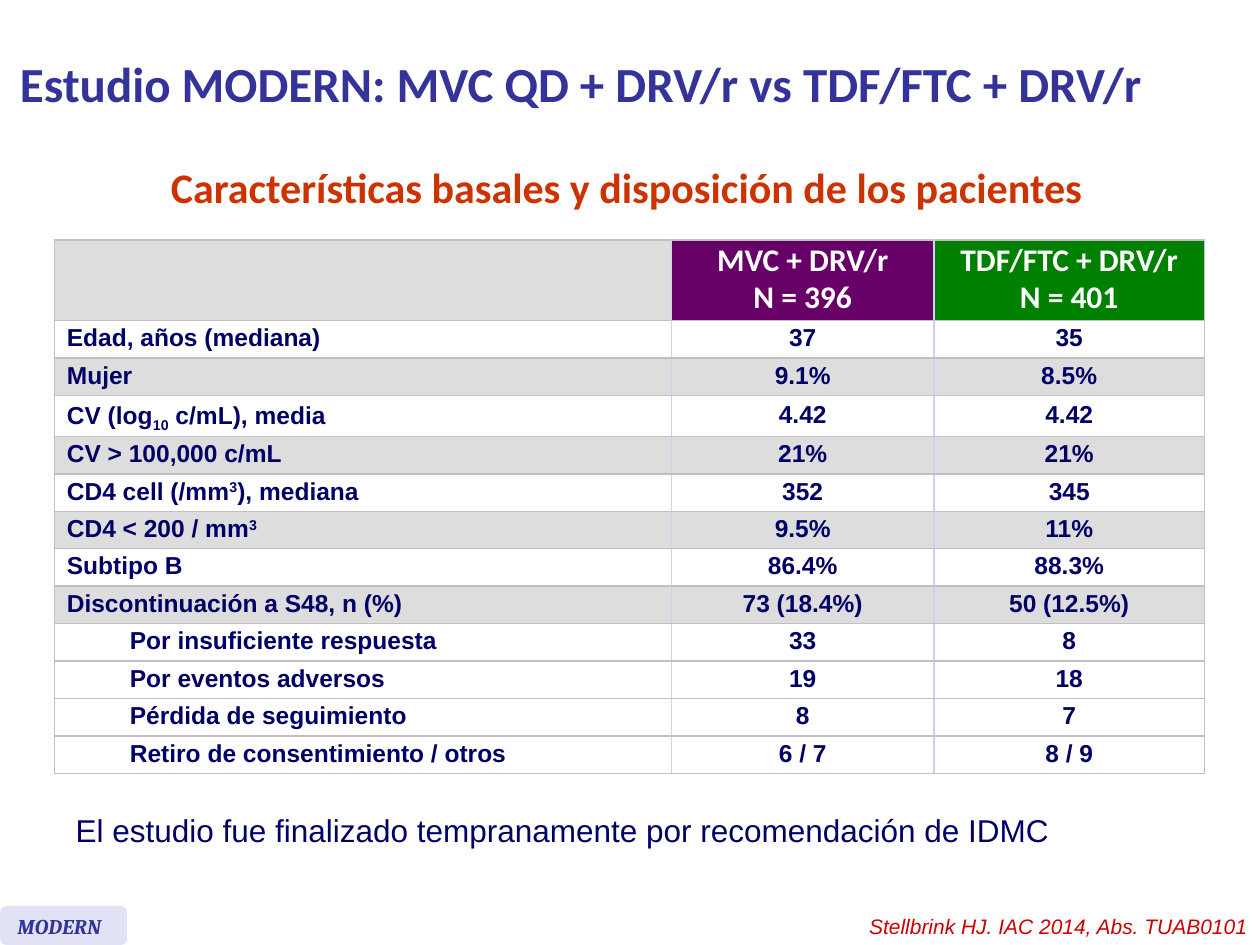
"""Build the MODERN study slide with baseline characteristics and patient disposition."""
from dataclasses import dataclass

from lxml.etree import SubElement
from pptx import Presentation
from pptx.dml.color import RGBColor
from pptx.enum.shapes import MSO_SHAPE
from pptx.enum.text import MSO_ANCHOR, PP_ALIGN
from pptx.oxml.ns import qn
from pptx.util import Pt

COLORS = {
    "title": "333399", "subtitle": "CC3300", "body": "000066", "citation": "CC0000",
    "white": "FFFFFF", "band": "DDDDDD", "mvc": "660066", "tdf": "008000",
    "badge": "E2E2F6", "grid": "C0C0C0", "divider": "D0D0F0",
}
COLUMN_WIDTHS = (352.8, 149.8, 154.8)
HEADER_HEIGHT, ROW_HEIGHT = 42, 21


@dataclass(frozen=True)
class Style:
    font: str
    size: float
    color: str
    bold: bool = False
    italic: bool = False


@dataclass(frozen=True)
class Span:
    text: str
    baseline: int = 0


@dataclass(frozen=True)
class Caption:
    text: str
    box: tuple[float, float, float, float]
    style: Style
    align: PP_ALIGN = PP_ALIGN.LEFT
    anchor: MSO_ANCHOR = MSO_ANCHOR.TOP
    line_spacing: float | None = None
    inset: float = 7.2


@dataclass(frozen=True)
class Measure:
    label: tuple[Span, ...]
    mvc: str
    tdf: str
    nested: bool = False


HEADER_STYLE = Style("Calibri", 18, "white", bold=True)
CELL_STYLE = Style("Arial", 14, "body", bold=True)

ARMS = (("MVC + DRV/r", "N = 396", "mvc"), ("TDF/FTC + DRV/r", "N = 401", "tdf"))

MEASURES = (
    Measure((Span("Edad, años (mediana)"),), "37", "35"),
    Measure((Span("Mujer"),), "9.1%", "8.5%"),
    Measure((Span("CV (log"), Span("10", -25), Span(" c/mL), media")), "4.42", "4.42"),
    Measure((Span("CV > 100,000 c/mL"),), "21%", "21%"),
    Measure((Span("CD4 cell (/mm"), Span("3", 30), Span("), mediana")), "352", "345"),
    Measure((Span("CD4 < 200 / mm"), Span("3", 30)), "9.5%", "11%"),
    Measure((Span("Subtipo B"),), "86.4%", "88.3%"),
    Measure((Span("Discontinuación a S48, n (%)"),), "73 (18.4%)", "50 (12.5%)"),
    Measure((Span("Por insuficiente respuesta"),), "33", "8", nested=True),
    Measure((Span("Por eventos adversos"),), "19", "18", nested=True),
    Measure((Span("Pérdida de seguimiento"),), "8", "7", nested=True),
    Measure((Span("Retiro de consentimiento / otros"),), "6 / 7", "8 / 9", nested=True),
)

CAPTIONS = (
    Caption("Características basales y disposición de los pacientes",
            (76.3, 102.2, 563.8, 25.2), Style("Calibri", 24, "subtitle", bold=True),
            PP_ALIGN.CENTER, line_spacing=15.2),
    Caption("El estudio fue finalizado tempranamente por recomendación de IDMC",
            (31, 460.1, 635, 28.8), Style("Arial", 18, "body"), inset=12.2),
    Caption("Estudio MODERN: MVC QD + DRV/r vs TDF/FTC + DRV/r",
            (4.3, 3.6, 713.5, 87.1), Style("Calibri", 28, "title", bold=True),
            anchor=MSO_ANCHOR.MIDDLE),
    Caption("MODERN", (2.9, 518.4, 67.7, 21.6),
            Style("Cambria", 12, "title", bold=True, italic=True)),
    Caption("Stellbrink HJ. IAC 2014, Abs. TUAB0101", (476.6, 518.4, 243.4, 21.6),
            Style("Arial", 12, "citation", italic=True), PP_ALIGN.RIGHT),
)


def rgb(name: str) -> RGBColor:
    """Return the named colour."""
    return RGBColor.from_string(COLORS[name])


def add_span(paragraph, span: Span, style: Style) -> None:
    """Append one styled run to a paragraph."""
    run = paragraph.add_run()
    run.text = span.text
    run.font.name = style.font
    run.font.size = Pt(style.size)
    run.font.bold = style.bold
    run.font.italic = style.italic
    run.font.color.rgb = rgb(style.color)
    if span.baseline:
        run._r.get_or_add_rPr().set("baseline", str(span.baseline * 1000))


def add_caption(slide, caption: Caption) -> None:
    """Draw a one-line text box."""
    box = slide.shapes.add_textbox(*map(Pt, caption.box))
    frame = box.text_frame
    frame.word_wrap = True
    frame.vertical_anchor = caption.anchor
    frame.margin_left = Pt(caption.inset)
    paragraph = frame.paragraphs[0]
    paragraph.alignment = caption.align
    if caption.line_spacing:
        paragraph.line_spacing = Pt(caption.line_spacing)
    add_span(paragraph, Span(caption.text), caption.style)


def format_cell(cell, column: int, fill: str) -> None:
    """Give a cell its borders, fill and anchor."""
    properties = cell._tc.get_or_add_tcPr()
    borders = {
        "a:lnL": "grid" if column == 0 else "divider",
        "a:lnR": "grid" if column == len(COLUMN_WIDTHS) - 1 else "divider",
        "a:lnT": "grid",
        "a:lnB": "grid",
    }
    for side, color in borders.items():
        line = SubElement(properties, qn(side), w=str(Pt(1)))
        SubElement(SubElement(line, qn("a:solidFill")), qn("a:srgbClr"), val=COLORS[color])
    cell.fill.solid()
    cell.fill.fore_color.rgb = rgb(fill)
    cell.vertical_anchor = MSO_ANCHOR.MIDDLE


def fill_header(table) -> None:
    """Write the treatment arms into the first row."""
    format_cell(table.cell(0, 0), 0, "band")
    for column, (arm, patients, fill) in enumerate(ARMS, start=1):
        cell = table.cell(0, column)
        format_cell(cell, column, fill)
        frame = cell.text_frame
        count = frame.add_paragraph()
        count.space_before = Pt(3.6)
        for paragraph, text in zip(frame.paragraphs, (arm, patients)):
            paragraph.alignment = PP_ALIGN.CENTER
            paragraph.line_spacing = 0.8
            add_span(paragraph, Span(text), HEADER_STYLE)


def fill_measure(table, row: int, measure: Measure) -> None:
    """Write one measure and its two values into a row."""
    banded = row % 2 == 0 and not measure.nested
    contents = (measure.label, (Span(measure.mvc),), (Span(measure.tdf),))
    for column, spans in enumerate(contents):
        cell = table.cell(row, column)
        format_cell(cell, column, "band" if banded else "white")
        paragraph = cell.text_frame.paragraphs[0]
        paragraph.alignment = PP_ALIGN.CENTER if column else PP_ALIGN.LEFT
        paragraph.line_spacing = 0.9
        if measure.nested and column == 0:
            paragraph.level = 1
            indent = paragraph._p.get_or_add_pPr()
            indent.set("marL", str(Pt(36)))
            indent.set("indent", "0")
        for span in spans:
            add_span(paragraph, span, CELL_STYLE)


def add_characteristics(slide) -> None:
    """Draw the table of patient characteristics."""
    height = HEADER_HEIGHT + ROW_HEIGHT * len(MEASURES)
    table = slide.shapes.add_table(
        len(MEASURES) + 1, len(COLUMN_WIDTHS),
        Pt(31), Pt(137.2), Pt(sum(COLUMN_WIDTHS)), Pt(height)).table
    table.horz_banding = False
    table.first_row = False
    for column, width in zip(table.columns, COLUMN_WIDTHS):
        column.width = Pt(width)
    for index, row in enumerate(table.rows):
        row.height = Pt(ROW_HEIGHT if index else HEADER_HEIGHT)
    fill_header(table)
    for row, measure in enumerate(MEASURES, start=1):
        fill_measure(table, row, measure)


def add_badge(slide) -> None:
    """Draw the rounded background of the study name."""
    badge = slide.shapes.add_shape(
        MSO_SHAPE.ROUNDED_RECTANGLE, Pt(0), Pt(517.7), Pt(72.7), Pt(22.3))
    badge.shadow.inherit = False
    badge.fill.solid()
    badge.fill.fore_color.rgb = rgb("badge")
    badge.line.fill.background()


def main() -> None:
    """Build and save the slide."""
    deck = Presentation()
    deck.slide_width, deck.slide_height = Pt(720), Pt(540)
    slide = deck.slides.add_slide(deck.slide_layouts[6])
    add_characteristics(slide)
    add_badge(slide)
    for caption in CAPTIONS:
        add_caption(slide, caption)
    deck.save("out.pptx")


if __name__ == "__main__":
    main()
